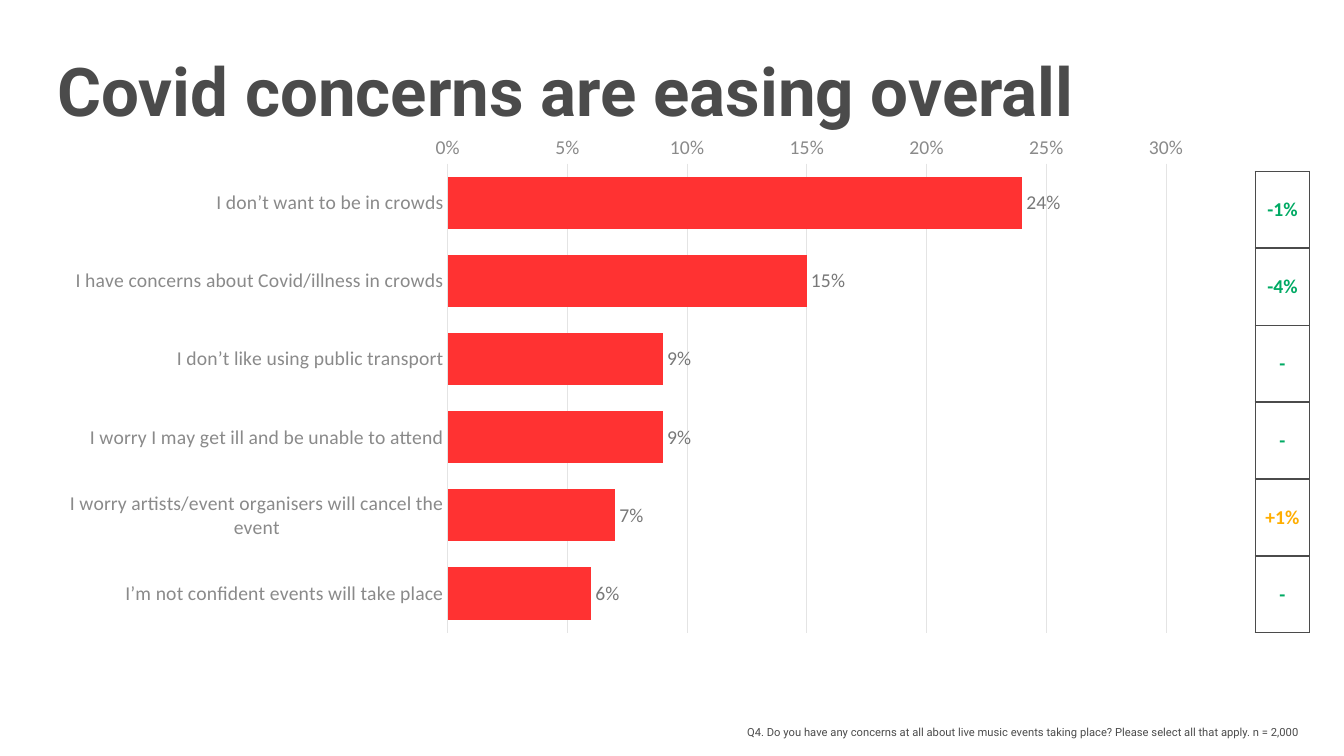
"""Build the slide on easing Covid concerns among live music audiences."""
from lxml.etree import SubElement
from pptx import Presentation
from pptx.chart.data import CategoryChartData
from pptx.dml.color import RGBColor
from pptx.enum.chart import XL_CHART_TYPE, XL_LABEL_POSITION, XL_TICK_MARK
from pptx.enum.text import MSO_ANCHOR, PP_ALIGN
from pptx.oxml import parse_xml
from pptx.oxml.ns import nsdecls, qn
from pptx.util import Inches, Pt

DARK = RGBColor(0x4B, 0x4B, 0x4B)
AXIS_TEXT = RGBColor(0x8A, 0x8A, 0x8A)
LABEL_TEXT = RGBColor(0x78, 0x78, 0x78)
GRID = RGBColor(0xE4, 0xE4, 0xE4)
RED = RGBColor(0xFF, 0x32, 0x32)
GREEN = RGBColor(0x00, 0xAA, 0x64)
AMBER = RGBColor(0xFF, 0xAE, 0x00)
WHITE = RGBColor(0xFF, 0xFF, 0xFF)

CONCERNS = [
    ("I don’t want to be in crowds", 0.24, "-1%"),
    ("I have concerns about Covid/illness in crowds", 0.15, "-4%"),
    ("I don’t like using public transport", 0.09, "-"),
    ("I worry I may get ill and be unable to attend", 0.09, "-"),
    ("I worry artists/event organisers will cancel the event", 0.07, "+1%"),
    ("I’m not confident events will take place", 0.06, "-"),
]
PLOT_AREA = {"x": 0.345, "y": 0.073, "w": 0.619, "h": 0.905}


def style_font(font, name, size, color, bold=False):
    font.name = name
    font.size = Pt(size)
    font.color.rgb = color
    font.bold = bold


presentation = Presentation()
presentation.slide_width = Inches(13.33)
presentation.slide_height = Inches(7.5)
slide = presentation.slides.add_slide(presentation.slide_layouts[5])

title = slide.shapes.title
title.left, title.top = Inches(0.47), Inches(0.43)
title.width, title.height = Inches(12.67), Inches(0.91)
title.text_frame.text = "Covid concerns are easing overall"
title.text_frame.vertical_anchor = MSO_ANCHOR.MIDDLE
paragraph = title.text_frame.paragraphs[0]
paragraph.alignment = PP_ALIGN.LEFT
style_font(paragraph.runs[0].font, "Roboto", 48, DARK, True)

table_frame = slide.shapes.add_table(
    len(CONCERNS), 1, Inches(12.45), Inches(1.7), Inches(0.54), Inches(4.58))
table = table_frame.table
table.first_row = table.horz_banding = False
for row, (concern, share, change) in enumerate(CONCERNS):
    cell = table.cell(row, 0)
    cell.text_frame.text = change
    cell.vertical_anchor = MSO_ANCHOR.MIDDLE
    cell.margin_left = cell.margin_right = Inches(0.05)
    paragraph = cell.text_frame.paragraphs[0]
    paragraph.alignment = PP_ALIGN.CENTER
    color = AMBER if change.startswith("+") else GREEN
    style_font(paragraph.runs[0].font, "Calibri", 14, color, True)
    properties = cell._tc.get_or_add_tcPr()
    for side in "LRTB":
        width = 2 if row == 0 and side == "B" else 1
        properties.append(parse_xml(
            f'<a:ln{side} {nsdecls("a")} w="{Pt(width)}"><a:solidFill>'
            f'<a:srgbClr val="{DARK}"/></a:solidFill></a:ln{side}>'))
    cell.fill.solid()
    cell.fill.fore_color.rgb = WHITE

footnote = slide.shapes.add_textbox(
    Inches(3.81), Inches(7.15), Inches(9.18), Inches(0.24))
footnote.text_frame.word_wrap = True
footnote.text_frame.text = (
    "Q4. Do you have any concerns at all about live music events taking place? "
    "Please select all that apply. n = 2,000")
paragraph = footnote.text_frame.paragraphs[0]
paragraph.alignment = PP_ALIGN.RIGHT
style_font(paragraph.runs[0].font, "Roboto", 8, DARK)

chart_data = CategoryChartData(number_format="0%")
chart_data.categories = [concern for concern, share, change in CONCERNS]
chart_data.add_series("Series 1", [share for concern, share, change in CONCERNS])
chart = slide.shapes.add_chart(
    XL_CHART_TYPE.BAR_CLUSTERED, Inches(0.47), Inches(1.25),
    Inches(11.51), Inches(5.14), chart_data).chart
style_font(chart.font, "Calibri", 14, DARK)
chart.has_legend = False
chart.has_title = False

for axis in (chart.category_axis, chart.value_axis):
    axis.major_tick_mark = axis.minor_tick_mark = XL_TICK_MARK.NONE
    style_font(axis.tick_labels.font, "Calibri", 14, AXIS_TEXT)
chart.category_axis.reverse_order = True
chart.category_axis.format.line.color.rgb = GRID
chart.category_axis.format.line.width = Pt(0.75)

value_axis = chart.value_axis
value_axis.minimum_scale = 0
value_axis.maximum_scale = 0.3
value_axis.major_unit = 0.05
value_axis.format.line.fill.background()
value_axis.major_gridlines.format.line.color.rgb = GRID
value_axis.major_gridlines.format.line.width = Pt(0.75)
value_axis.tick_labels.number_format = "0%"
value_axis.tick_labels.number_format_is_linked = False

plot = chart.plots[0]
plot.gap_width = 50
plot.vary_by_categories = False
series = plot.series[0]
series.format.fill.solid()
series.format.fill.fore_color.rgb = RED
labels = series.data_labels
labels.show_value = True
labels.position = XL_LABEL_POSITION.OUTSIDE_END
labels.number_format = "0%"
labels.number_format_is_linked = False
style_font(labels.font, "Calibri", 14, LABEL_TEXT)

plot_area = chart._chartSpace.chart.plotArea
for old_layout in plot_area.findall(qn("c:layout")):
    plot_area.remove(old_layout)
layout = parse_xml(f'<c:layout {nsdecls("c")}><c:manualLayout/></c:layout>')
plot_area.insert(0, layout)
SubElement(layout[0], qn("c:layoutTarget")).set("val", "inner")
for edge in "xy":
    SubElement(layout[0], qn(f"c:{edge}Mode")).set("val", "edge")
for dimension, fraction in PLOT_AREA.items():
    SubElement(layout[0], qn(f"c:{dimension}")).set("val", str(fraction))

presentation.save("out.pptx")
